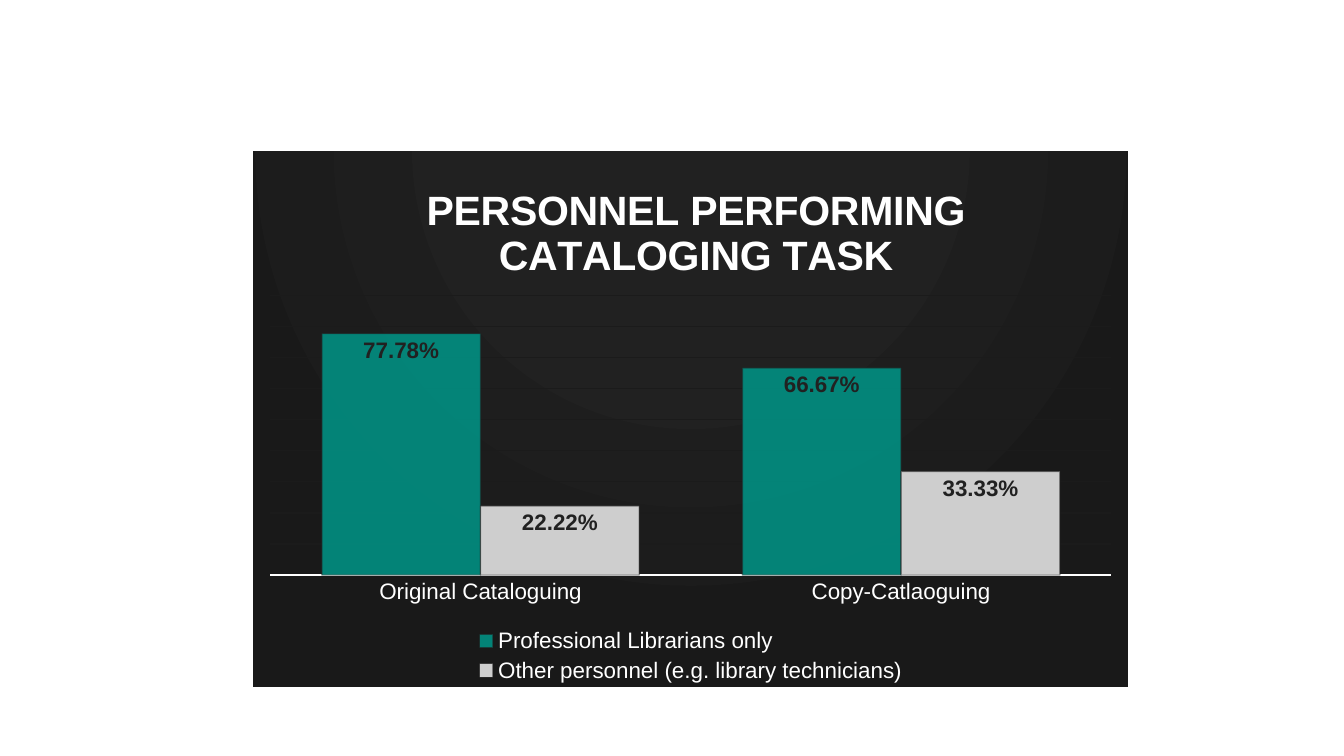
import pptx
import pptx.chart.data
import pptx.dml.color
import pptx.enum.chart
import pptx.enum.shapes
import pptx.oxml
import pptx.oxml.ns
import pptx.util
from dataclasses import dataclass

PX = 9525


@dataclass(frozen=True)
class Theme:
    font: str = "Arial"
    white: str = "FFFFFF"
    dark: str = "212121"
    edge: str = "191919"
    grid: str = "1B1B1B"
    teal: str = "009688"
    silver: str = "EEEEEE"
    title_size: int = 22
    text_size: int = 12
    base_size: int = 10


THEME = Theme()
CATEGORIES = ["Original Cataloguing", "Copy-Catlaoguing"]
PERSONNEL = [
    ("Professional Librarians only", (0.7778, 0.6667), THEME.teal),
    ("Other personnel (e.g. library technicians)", (0.2222, 0.3333), THEME.silver),
]


def rgb(color):
    return pptx.dml.color.RGBColor.from_string(color)


def style_font(font, size, color, bold=False):
    font.name = THEME.font
    font.size = pptx.util.Pt(size)
    font.bold = bold
    font.color.rgb = rgb(color)


def style_line(line, color, width):
    line.color.rgb = rgb(color)
    line.width = pptx.util.Pt(width)


def set_alpha(format_part, percent):
    for color in format_part.iter(pptx.oxml.ns.qn("a:srgbClr")):
        alpha = color.makeelement(pptx.oxml.ns.qn("a:alpha"), {"val": str(percent * 1000)})
        color.append(alpha)


def place(part, target=None, **fractions):
    for old in part.findall(pptx.oxml.ns.qn("c:layout")):
        part.remove(old)
    inner = f'<c:layoutTarget val="{target}"/>' if target else ""
    modes = "".join(f'<c:{axis}Mode val="edge"/>' for axis in "xy")
    values = "".join(f'<c:{key} val="{value}"/>' for key, value in fractions.items())
    layout = pptx.oxml.parse_xml(
        f'<c:layout {pptx.oxml.ns.nsdecls("c")}><c:manualLayout>'
        f"{inner}{modes}{values}</c:manualLayout></c:layout>"
    )
    before = [child for child in part
              if child.tag in {pptx.oxml.ns.qn("c:tx"), pptx.oxml.ns.qn("c:legendPos")}]
    part.insert(len(before), layout)


def fill_chart_area(chart):
    stops = "".join(
        f'<a:gs pos="{position * 1000}"><a:srgbClr val="{color}"/></a:gs>'
        for position, color in [(0, THEME.dark), (39, THEME.dark), (100, THEME.edge)]
    )
    area = pptx.oxml.parse_xml(
        f'<c:spPr {pptx.oxml.ns.nsdecls("c", "a")}><a:gradFill><a:gsLst>{stops}</a:gsLst>'
        '<a:path path="circle">'
        '<a:fillToRect l="50000" t="-80000" r="50000" b="180000"/></a:path></a:gradFill>'
        f'<a:ln w="9525"><a:solidFill><a:srgbClr val="{THEME.white}"/></a:solidFill></a:ln>'
        "</c:spPr>"
    )
    chart.element.find(pptx.oxml.ns.qn("c:chart")).addnext(area)


def add_backdrop(slide, left, top, width, height):
    slide.background.fill.solid()
    slide.background.fill.fore_color.rgb = rgb(THEME.dark)
    backdrop = slide.shapes.add_shape(
        pptx.enum.shapes.MSO_SHAPE.RECTANGLE, left * PX, top * PX, width * PX, height * PX)
    backdrop.shadow.inherit = False
    backdrop.fill.solid()
    backdrop.fill.fore_color.rgb = rgb(THEME.white)
    style_line(backdrop.line, THEME.white, 2)


def style_axes(chart):
    tasks = chart.category_axis
    tasks.major_tick_mark = pptx.enum.chart.XL_TICK_MARK.NONE
    style_font(tasks.tick_labels.font, THEME.text_size, THEME.white)
    style_line(tasks.format.line, THEME.white, 1.5)

    share = chart.value_axis
    share.visible = False
    share.minimum_scale, share.maximum_scale, share.major_unit = 0, 0.9, 0.1
    share.tick_labels.number_format = "0.00%"
    share.tick_labels.number_format_is_linked = False
    style_line(share.major_gridlines.format.line, THEME.grid, 0.75)


def style_bars(bars, color):
    bars.format.fill.solid()
    bars.format.fill.fore_color.rgb = rgb(color)
    properties = bars.format.fill._xPr
    set_alpha(properties, 85)
    style_line(bars.format.line, THEME.dark, 0.75)
    set_alpha(properties.find(pptx.oxml.ns.qn("a:ln")), 50)
    labels = bars.data_labels
    labels.show_value = True
    labels.number_format = "0.00%"
    labels.number_format_is_linked = False
    labels.position = pptx.enum.chart.XL_LABEL_POSITION.INSIDE_END
    style_font(labels.font, THEME.text_size, THEME.dark, bold=True)


def add_personnel_chart(slide, left, top, width, height):
    shares = pptx.chart.data.CategoryChartData(number_format="0.00%")
    shares.categories = CATEGORIES
    for name, values, _ in PERSONNEL:
        shares.add_series(name, values)
    chart = slide.shapes.add_chart(
        pptx.enum.chart.XL_CHART_TYPE.COLUMN_CLUSTERED,
        left * PX, top * PX, width * PX, height * PX, shares).chart
    style_font(chart.font, THEME.base_size, THEME.white)
    fill_chart_area(chart)

    heading = chart.chart_title.text_frame.paragraphs[0]
    heading.text = "PERSONNEL PERFORMING CATALOGING TASK"
    style_font(heading.font, THEME.title_size, THEME.white, bold=True)
    chart.chart_title.include_in_layout = False
    place(chart.chart_title._element, x=0.19, y=0.05)

    style_axes(chart)
    columns = chart.plots[0]
    columns.gap_width = 65
    columns.overlap = 0
    columns.vary_by_categories = False
    for bars, (_, _, color) in zip(columns.series, PERSONNEL):
        style_bars(bars, color)
    plot_area = chart.element.find(".//" + pptx.oxml.ns.qn("c:plotArea"))
    place(plot_area, "inner", x=0.02, y=0.27, w=0.96, h=0.52)

    chart.has_legend = True
    chart.legend.position = pptx.enum.chart.XL_LEGEND_POSITION.BOTTOM
    chart.legend.include_in_layout = False
    style_font(chart.legend.font, THEME.text_size, THEME.white)
    place(chart.legend._element, x=0.25, y=0.88, w=0.5, h=0.12)


def main():
    deck = pptx.Presentation()
    deck.slide_width, deck.slide_height = 960 * PX, 540 * PX
    slide = deck.slides.add_slide(deck.slide_layouts[6])
    add_backdrop(slide, 0, 0, 960, 540)
    add_personnel_chart(slide, 180, 107, 627, 385)
    deck.save("out.pptx")


if __name__ == "__main__":
    main()
